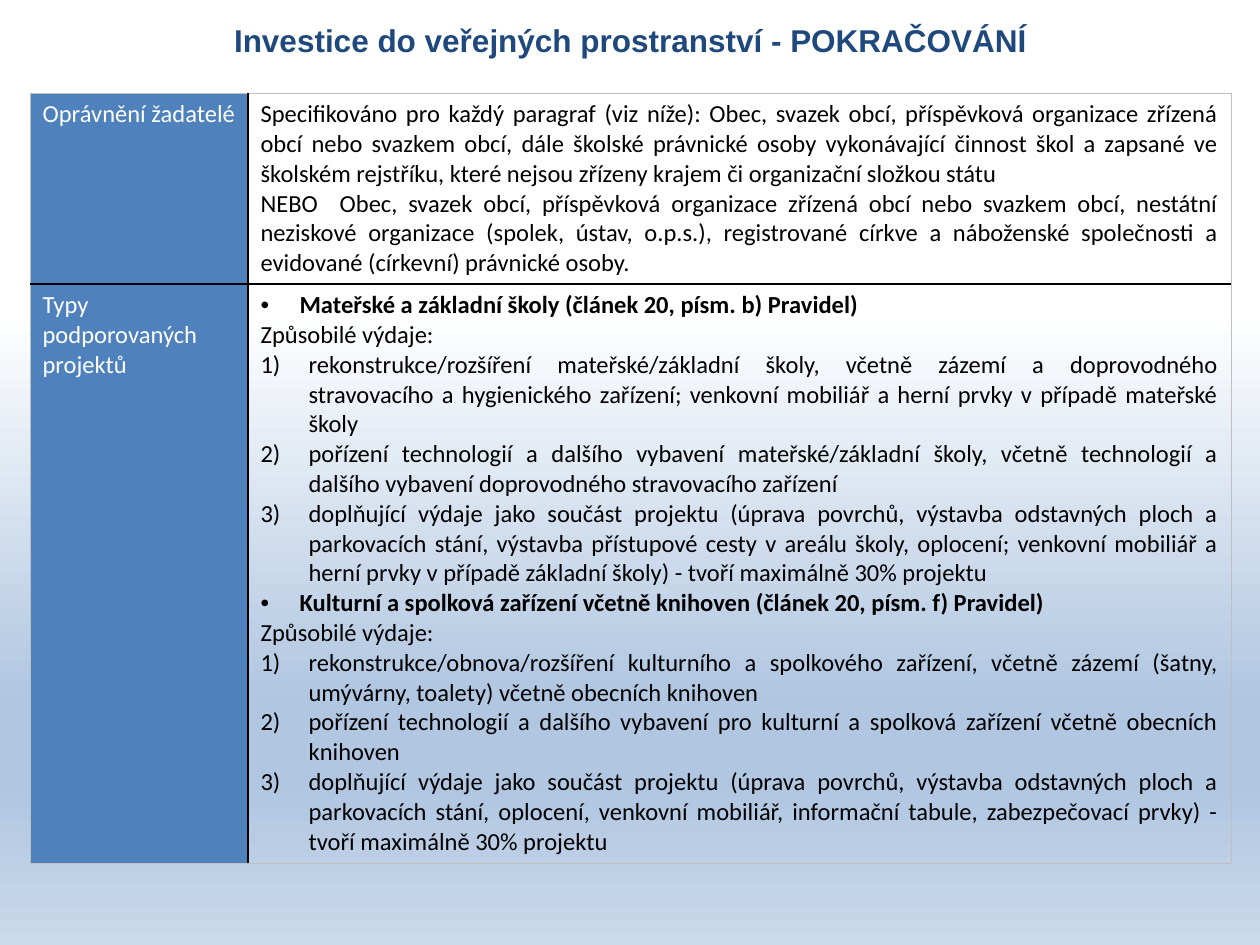
from dataclasses import dataclass

from lxml.etree import SubElement
from pptx import Presentation
from pptx.dml.color import RGBColor
from pptx.enum.text import MSO_ANCHOR, PP_ALIGN
from pptx.oxml.ns import qn
from pptx.slide import Slide
from pptx.table import _Cell
from pptx.text.text import TextFrame
from pptx.util import Emu, Pt

SCALE = 914400 / 126
BLUE, BLACK, WHITE, GREY = "4F81BD", "000000", "FFFFFF", "BFBFBF"


@dataclass
class Para:
    text: str
    mark: str = ""
    indent: int = 0
    bold: bool = False
    color: str = BLACK
    align: PP_ALIGN = PP_ALIGN.JUSTIFY
    font: str = "Calibri"
    size: int = 14


def label(text: str) -> Para:
    return Para(text, color=WHITE, align=PP_ALIGN.LEFT)


def head(text: str) -> Para:
    return Para(text, "•", 39, True)


def item(text: str) -> Para:
    return Para(text, "1)", 48)


COSTS = Para("Způsobilé výdaje: ")
TITLE = Para("Investice do veřejných prostranství - POKRAČOVÁNÍ", bold=True,
             color="1F497D", align=PP_ALIGN.CENTER, font="Arial", size=18)
ROWS = [
    ([label("Oprávnění žadatelé")], [
        Para("Specifikováno pro každý paragraf (viz níže): Obec, svazek obcí, příspěvková organizace zřízená obcí nebo svazkem obcí, dále školské právnické osoby vykonávající činnost škol a zapsané ve školském rejstříku, které nejsou zřízeny krajem či organizační složkou státu"),
        Para("NEBO  Obec, svazek obcí, příspěvková organizace zřízená obcí nebo svazkem obcí, nestátní neziskové organizace (spolek, ústav, o.p.s.), registrované církve a náboženské společnosti a evidované (církevní) právnické osoby. "),
    ]),
    ([label("Typy podporovaných projektů")], [
        head("Mateřské a základní školy (článek 20, písm. b) Pravidel)"),
        COSTS,
        item("rekonstrukce/rozšíření mateřské/základní školy, včetně zázemí a doprovodného stravovacího a hygienického zařízení; venkovní mobiliář a herní prvky v případě mateřské školy "),
        item("pořízení technologií a dalšího vybavení mateřské/základní školy, včetně technologií a dalšího vybavení doprovodného stravovacího zařízení"),
        item("doplňující výdaje jako součást projektu (úprava povrchů, výstavba odstavných ploch a parkovacích stání, výstavba přístupové cesty v areálu školy, oplocení; venkovní mobiliář a herní prvky v případě základní školy) - tvoří maximálně 30% projektu"),
        head("Kulturní a spolková zařízení včetně knihoven (článek 20, písm. f) Pravidel)"),
        COSTS,
        item("rekonstrukce/obnova/rozšíření kulturního a spolkového zařízení, včetně zázemí (šatny, umývárny, toalety) včetně obecních knihoven"),
        item("pořízení technologií a dalšího vybavení pro kulturní a spolková zařízení včetně obecních knihoven"),
        item("doplňující výdaje jako součást projektu (úprava povrchů, výstavba odstavných ploch a parkovacích stání, oplocení, venkovní mobiliář, informační tabule, zabezpečovací prvky) - tvoří maximálně 30% projektu"),
    ]),
]


def px(count: int) -> Emu:
    return Emu(round(count * SCALE))


def rgb(code: str) -> RGBColor:
    return RGBColor.from_string(code)


def write(frame: TextFrame, paras: list[Para]) -> None:
    for i, para in enumerate(paras):
        line = frame.add_paragraph() if i else frame.paragraphs[0]
        line.alignment = para.align
        if para.mark:
            props = line._p.get_or_add_pPr()
            props.set("marL", str(px(para.indent)))
            props.set("indent", str(-px(para.indent)))
            if para.mark == "•":
                SubElement(props, qn("a:buFont"), typeface="Arial")
                SubElement(props, qn("a:buChar"), char=para.mark)
            else:
                SubElement(props, qn("a:buAutoNum"), type="arabicParenR")
        run = line.add_run()
        run.text = para.text
        font = run.font
        font.name, font.size, font.bold = para.font, Pt(para.size), para.bold
        font.color.rgb = rgb(para.color)


def edge(cell: _Cell, side: str, inner: bool) -> None:
    width = Pt(1) if inner else Pt(0.5)
    line = SubElement(cell._tc.get_or_add_tcPr(), qn(f"a:ln{side}"), w=str(width))
    fill = SubElement(line, qn("a:solidFill"))
    SubElement(fill, qn("a:srgbClr"), val=BLACK if inner else GREY)


def shade(slide: Slide) -> None:
    fill = slide.background.fill
    fill.gradient()
    fill.gradient_angle = 270
    stops = slide.element.find(".//" + qn("a:gsLst"))
    for stop in list(stops):
        stops.remove(stop)
    for place, code in ((33, WHITE), (74, "B0C6E1"), (83, "B0C6E1"), (100, "CAD9EB")):
        stop = SubElement(stops, qn("a:gs"), pos=str(place * 1000))
        SubElement(stop, qn("a:srgbClr"), val=code)


def grid(slide: Slide) -> None:
    table = slide.shapes.add_table(2, 2, px(30), px(93), px(1201), px(770)).table
    table.first_row = table.horz_banding = False
    for col, width in zip(table.columns, (218, 983)):
        col.width = px(width)
    for r, (row, height) in enumerate(zip(table.rows, (191, 579))):
        row.height = px(height)
        for c, cell in enumerate(row.cells):
            for side, inner in (("L", c == 1), ("R", c == 0), ("T", r == 1), ("B", r == 0)):
                edge(cell, side, inner)
            if c:
                cell.fill.background()
            else:
                cell.fill.solid()
                cell.fill.fore_color.rgb = rgb(BLUE)
            write(cell.text_frame, ROWS[r][c])


def main() -> None:
    """Build the slide and save it."""
    deck = Presentation()
    deck.slide_width, deck.slide_height = px(1260), px(945)
    slide = deck.slides.add_slide(deck.slide_layouts[6])
    shade(slide)
    frame = slide.shapes.add_textbox(px(30), px(14), px(1201), px(52)).text_frame
    frame.word_wrap = True
    frame.vertical_anchor = MSO_ANCHOR.MIDDLE
    write(frame, [TITLE])
    grid(slide)
    deck.save("out.pptx")


if __name__ == "__main__":
    main()
